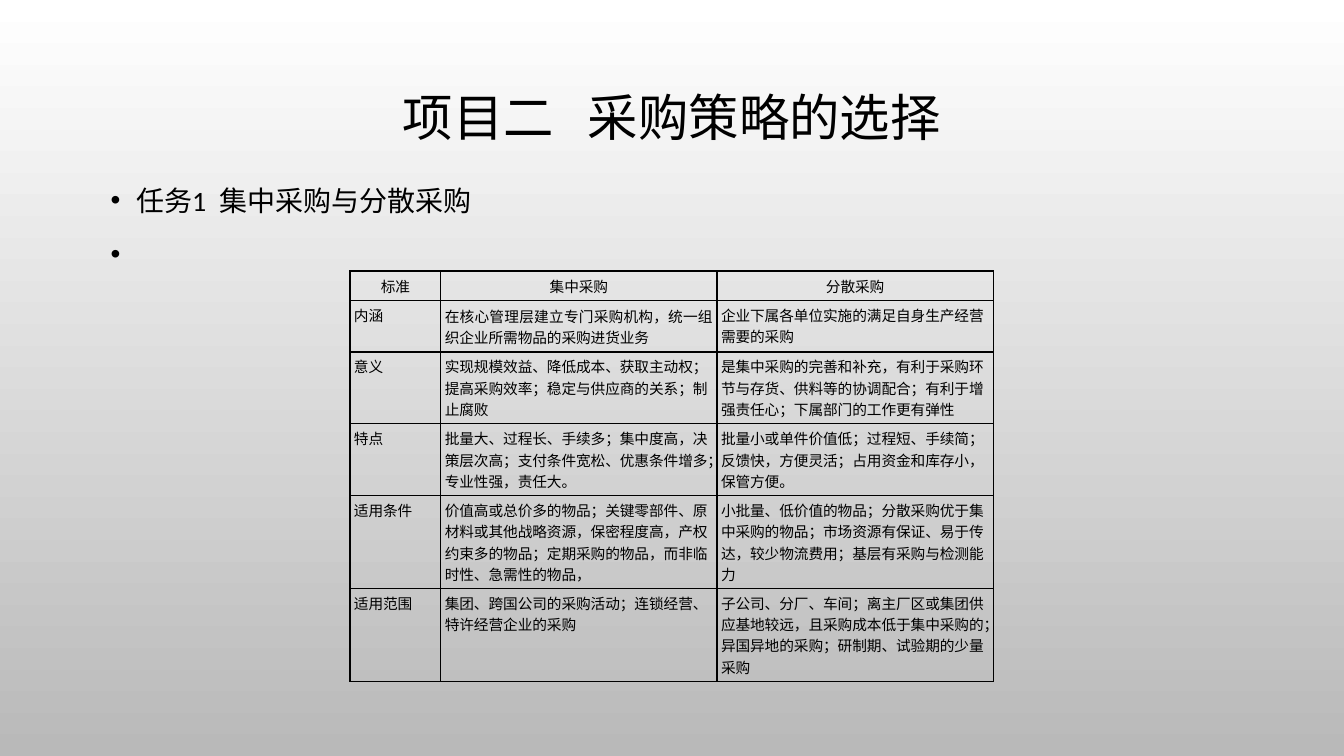
from lxml import etree
from pptx import Presentation
from pptx.dml.color import RGBColor
from pptx.enum.text import MSO_ANCHOR, PP_ALIGN
from pptx.oxml.ns import qn
from pptx.util import Cm, Pt

CENTER, LEFT, JUSTIFY = PP_ALIGN.CENTER, PP_ALIGN.LEFT, PP_ALIGN.JUSTIFY
TOP, MIDDLE = MSO_ANCHOR.TOP, MSO_ANCHOR.MIDDLE

COLORS = {"ink": "000000", "bg_top": "FFFFFF", "bg_bottom": "B9B9B9"}

TITLE = "项目二   采购策略的选择"
TASKS = ["任务1  集中采购与分散采购", " "]
COL_WIDTHS = [2.29, 6.96, 6.96]
ROW_HEIGHTS = [0.74, 1.28, 1.81, 1.81, 2.34, 2.34]
ROWS = [
    ["标准", "集中采购", "分散采购"],
    ["内涵",
     "在核心管理层建立专门采购机构，统一组织企业所需物品的采购进货业务",
     "企业下属各单位实施的满足自身生产经营需要的采购"],
    ["意义",
     "实现规模效益、降低成本、获取主动权；提高采购效率；稳定与供应商的关系；制止腐败",
     "是集中采购的完善和补充，有利于采购环节与存货、供料等的协调配合；"
     "有利于增强责任心；下属部门的工作更有弹性"],
    ["特点",
     "批量大、过程长、手续多；集中度高，决策层次高；支付条件宽松、优惠条件增多；"
     "专业性强，责任大。",
     "批量小或单件价值低；过程短、手续简；反馈快，方便灵活；占用资金和库存小，保管方便。"],
    ["适用条件",
     "价值高或总价多的物品；关键零部件、原材料或其他战略资源，保密程度高，"
     "产权约束多的物品；定期采购的物品，而非临时性、急需性的物品，",
     "小批量、低价值的物品；分散采购优于集中采购的物品；市场资源有保证、易于传达，"
     "较少物流费用；基层有采购与检测能力"],
    ["适用范围",
     "集团、跨国公司的采购活动；连锁经营、特许经营企业的采购",
     "子公司、分厂、车间；离主厂区或集团供应基地较远，且采购成本低于集中采购的；"
     "异国异地的采购；研制期、试验期的少量采购"],
]


def rgb(name):
    return RGBColor.from_string(COLORS[name])


def set_attrs(obj, values):
    for name, value in values.items():
        setattr(obj, name, value)


def set_background(s):
    fill = s.background.fill
    fill.gradient()
    fill.gradient_angle = 270
    for stop, name in zip(fill.gradient_stops, ("bg_top", "bg_bottom")):
        stop.color.rgb = rgb(name)


def write(p, text, font, size, **layout):
    set_attrs(p, layout)
    r = p.add_run()
    r.text = text
    set_attrs(r.font, {"name": font, "size": Pt(size)})
    r.font.color.rgb = rgb("ink")


def add_bullet(p):
    pPr = p._p.get_or_add_pPr()
    indent = Cm(0.64)
    pPr.set("marL", str(indent))
    pPr.set("indent", str(-indent))
    etree.SubElement(pPr, qn("a:buFont")).set("typeface", "Arial")
    etree.SubElement(pPr, qn("a:buChar")).set("char", "•")


def add_text(s, box, lines, size, anchor, bulleted=False, **layout):
    tf = s.shapes.add_textbox(*map(Cm, box)).text_frame
    set_attrs(tf, {"word_wrap": True, "vertical_anchor": anchor})
    for i, line in enumerate(lines):
        p = tf.add_paragraph() if i else tf.paragraphs[0]
        if bulleted:
            add_bullet(p)
        write(p, line, "Calibri", size, space_before=Pt(10 if i else 0), **layout)


def add_borders(cell):
    tcPr = cell._tc.get_or_add_tcPr()
    for i, side in enumerate(("lnL", "lnR", "lnT", "lnB")):
        ln = etree.Element(qn(f"a:{side}"), w=str(Pt(1)))
        fill = etree.SubElement(ln, qn("a:solidFill"))
        etree.SubElement(fill, qn("a:srgbClr")).set("val", COLORS["ink"])
        tcPr.insert(i, ln)


def add_comparison(s, left, top):
    frame = s.shapes.add_table(len(ROWS), len(COL_WIDTHS), Cm(left), Cm(top),
                               Cm(sum(COL_WIDTHS)), Cm(sum(ROW_HEIGHTS)))
    table = frame.table
    set_attrs(table, {"first_row": False, "horz_banding": False})
    for col, width in zip(table.columns, COL_WIDTHS):
        col.width = Cm(width)
    margins = {f"margin_{side}": Cm(0.1) for side in ("left", "right", "top", "bottom")}
    for i, (row, texts) in enumerate(zip(table.rows, ROWS)):
        row.height = Cm(ROW_HEIGHTS[i])
        for j, (cell, text) in enumerate(zip(row.cells, texts)):
            set_attrs(cell, {**margins, "vertical_anchor": TOP})
            cell.fill.background()
            add_borders(cell)
            layout = {"alignment": LEFT if i else CENTER}
            if (i, j) == (1, 1):
                layout = {"alignment": JUSTIFY, "line_spacing": Pt(15.6)}
            write(cell.text_frame.paragraphs[0], text, "Times New Roman", 10.5, **layout)


def main():
    prs = Presentation()
    set_attrs(prs, {"slide_width": Cm(33.87), "slide_height": Cm(19.05)})
    s = prs.slides.add_slide(prs.slide_layouts[6])
    set_background(s)
    add_text(s, (2.54, 1.73, 28.78, 2.62), [TITLE], 36, MIDDLE,
             alignment=CENTER, line_spacing=0.9)
    add_text(s, (2.54, 4.32, 28.78, 11.76), TASKS, 20, TOP, bulleted=True,
             line_spacing=1.2)
    add_comparison(s, 8.82, 6.83)
    prs.save("out.pptx")


if __name__ == "__main__":
    main()
